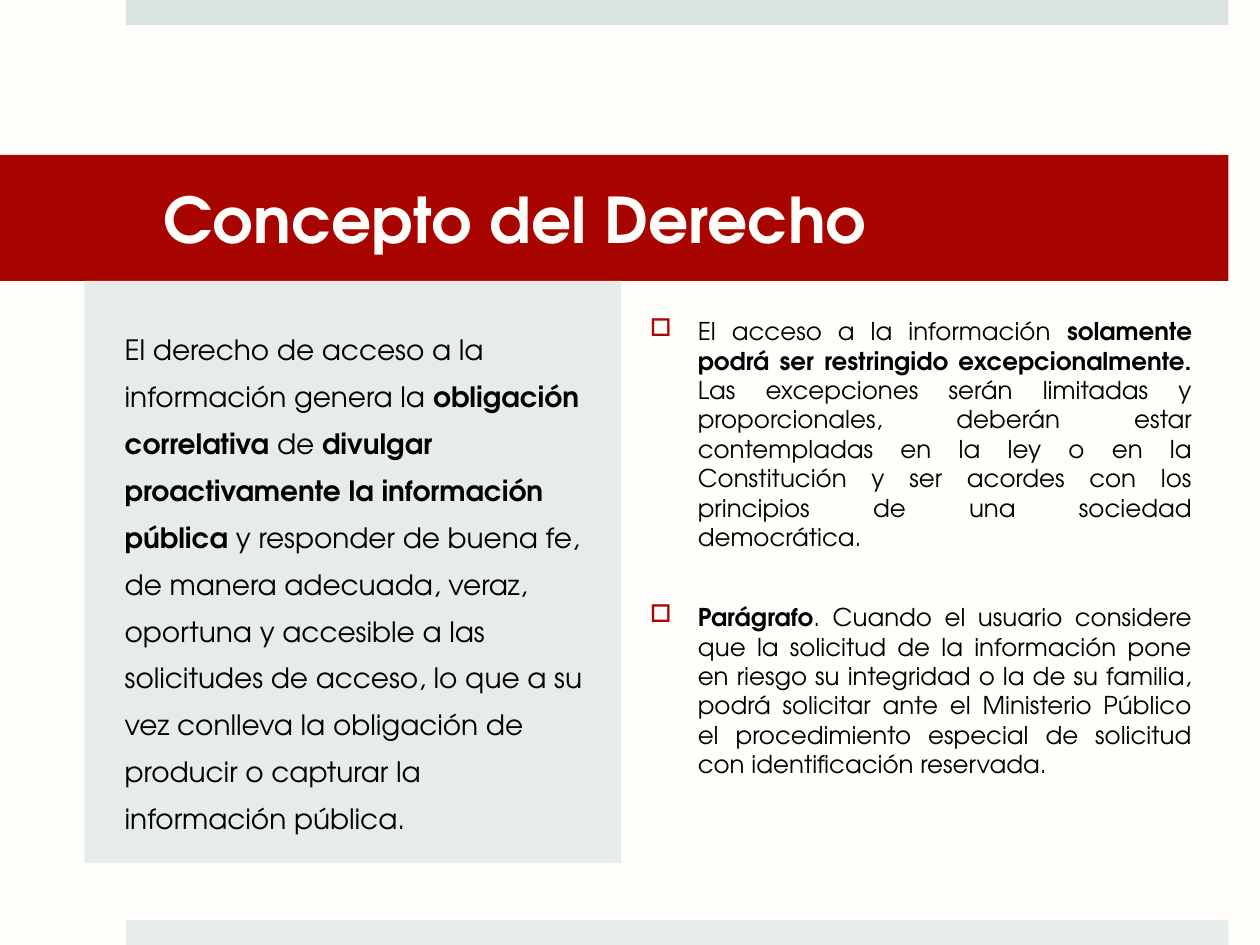
from dataclasses import dataclass

from lxml.etree import SubElement
from pptx import Presentation
from pptx.dml.color import RGBColor
from pptx.enum.shapes import MSO_SHAPE
from pptx.enum.text import MSO_ANCHOR, PP_ALIGN
from pptx.oxml.ns import qn
from pptx.util import Inches, Pt


@dataclass(frozen=True)
class Theme:
    font: str = "TeX Gyre Adventor"
    paper: str = "FFFEFB"
    ink: str = "020202"
    red: str = "A90500"
    bullet: str = "A70900"
    band: str = "DAE3DF"
    panel: str = "E6ECEA"
    title_size: int = 36
    panel_size: int = 16
    list_size: int = 14


def apply(obj, values):
    for name, value in values.items():
        setattr(obj, name, value)


class SlideBuilder:
    def __init__(self, slide, theme):
        self.s = slide
        self.theme = theme
        fill = slide.background.fill
        fill.solid()
        fill.fore_color.rgb = RGBColor.from_string(theme.paper)

    def box(self, at, color):
        sp = self.s.shapes.add_shape(MSO_SHAPE.RECTANGLE, *map(Inches, at))
        sp.shadow.inherit = False
        sp.fill.solid()
        sp.fill.fore_color.rgb = RGBColor.from_string(color)
        sp.line.fill.background()
        return sp

    def add_text(self, sp, runs, size, color, insets, frame=None, para=None, bullet=False):
        tf = sp.text_frame
        sides = ("margin_left", "margin_top", "margin_right", "margin_bottom")
        apply(tf, dict(zip(sides, map(Inches, insets))))
        apply(tf, {"word_wrap": True, "vertical_anchor": MSO_ANCHOR.TOP, **(frame or {})})
        p = tf.paragraphs[0]
        if bullet:
            self.bullet(p)
        apply(p, {"alignment": PP_ALIGN.LEFT, **(para or {})})
        for text, bold in runs:
            r = p.add_run()
            r.text = text
            apply(r.font, {"name": self.theme.font, "size": Pt(size), "bold": bold})
            r.font.color.rgb = RGBColor.from_string(color)

    def bullet(self, p):
        pPr = p._p.get_or_add_pPr()
        pPr.set("marL", str(Inches(0.38)))
        pPr.set("indent", str(Inches(-0.38)))
        clr = SubElement(pPr, qn("a:buClr"))
        SubElement(clr, qn("a:srgbClr")).set("val", self.theme.bullet)
        SubElement(pPr, qn("a:buChar")).set("char", "□")

    def title(self, at, text):
        t = self.theme
        self.add_text(self.box(at, t.red), [(text, True)], t.title_size, t.paper,
                      (1.3, 0.05, 0.3, 0.05), frame={"vertical_anchor": MSO_ANCHOR.MIDDLE})

    def panel(self, at, runs):
        t = self.theme
        self.add_text(self.box(at, t.panel), runs, t.panel_size, t.ink,
                      (0.32, 0.3, 0.3, 0.3), para={"line_spacing": 1.4})

    def item(self, at, runs):
        t = self.theme
        sp = self.s.shapes.add_textbox(*map(Inches, at))
        self.add_text(sp, runs, t.list_size, t.ink, (0.1, 0.05, 0.1, 0.05),
                      para={"alignment": PP_ALIGN.JUSTIFY}, bullet=True)


def main():
    prs = Presentation()
    apply(prs, {"slide_width": Inches(10), "slide_height": Inches(7.5)})
    theme = Theme()
    b = SlideBuilder(prs.slides.add_slide(prs.slide_layouts[6]), theme)

    for top, color in ((0, theme.band), (7.3, theme.panel)):
        b.box((1, top, 8.75, 0.2), color)

    b.title((0, 1.23, 9.75, 1), "Concepto del Derecho")
    b.panel((0.67, 2.23, 4.26, 4.62), [
        ("El derecho de acceso a la información genera la ", False),
        ("obligación correlativa ", True),
        ("de ", False),
        ("divulgar proactivamente la información pública ", True),
        ("y responder de buena fe, de manera adecuada, veraz, oportuna y accesible "
         "a las solicitudes de acceso, lo que a su vez conlleva la obligación de "
         "producir o capturar la información pública.", False),
    ])

    items = [
        [("El acceso a la información ", False),
         ("solamente podrá ser restringido excepcionalmente.", True),
         (" Las excepciones serán limitadas y proporcionales, deberán estar "
          "contempladas en la ley o en la Constitución y ser acordes con los "
          "principios de una sociedad democrática. ", False)],
        [("Parágrafo", True),
         (". Cuando el usuario considere que la solicitud de la información pone "
          "en riesgo su integridad o la de su familia, podrá solicitar ante el "
          "Ministerio Público el procedimiento especial de solicitud con "
          "identificación reservada.", False)],
    ]
    for i, runs in enumerate(items):
        b.item((5.06, 2.46 + 2.27 * i, 4.5, 2.12), runs)

    prs.save("out.pptx")


if __name__ == "__main__":
    main()
